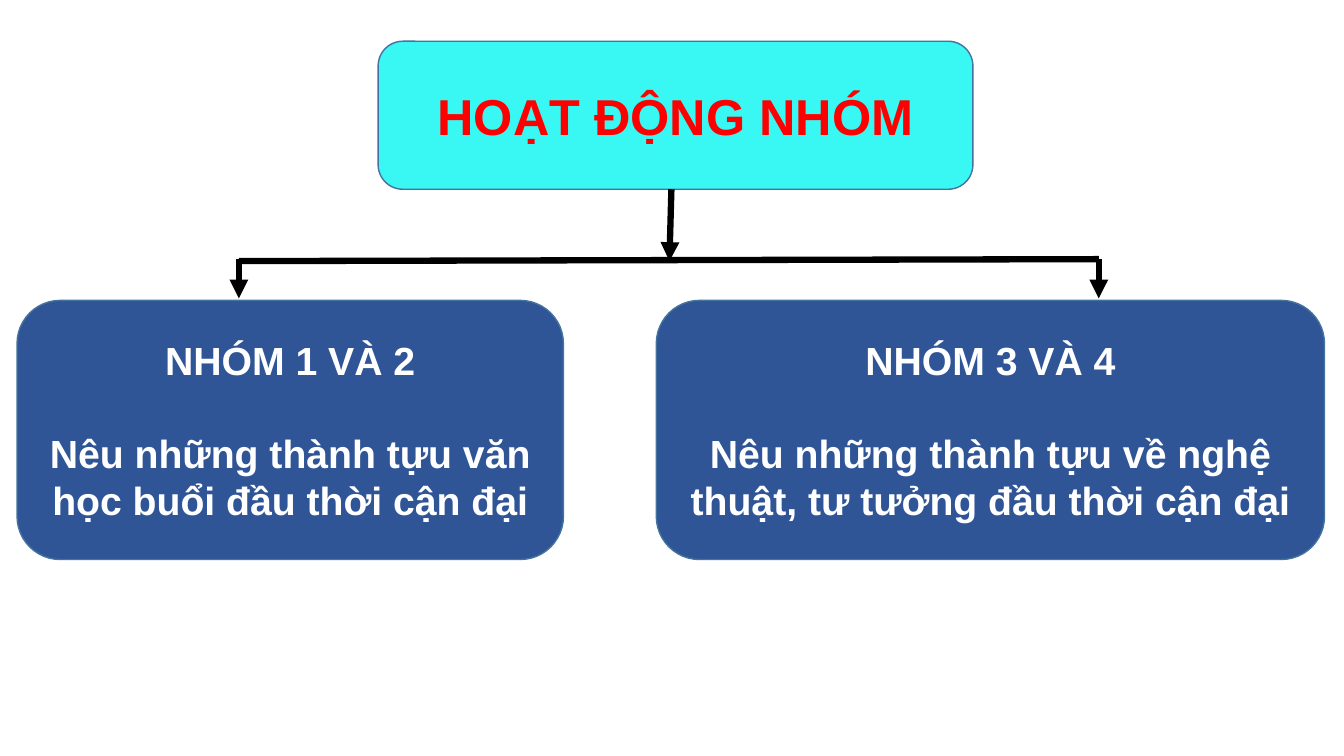
from lxml import etree
from pptx import Presentation
from pptx.dml.color import RGBColor
from pptx.enum.shapes import MSO_CONNECTOR, MSO_SHAPE
from pptx.enum.text import MSO_ANCHOR, PP_ALIGN
from pptx.oxml.ns import qn
from pptx.util import Cm, Pt

ROUNDED = MSO_SHAPE.ROUNDED_RECTANGLE
STRAIGHT = MSO_CONNECTOR.STRAIGHT
MIDDLE = MSO_ANCHOR.MIDDLE
CENTER = PP_ALIGN.CENTER

FONT = "Arial"
COLORS = {
    "title_fill": "39F7F2",
    "title_text": "FF0000",
    "group_fill": "2F5597",
    "group_text": "FFFFFF",
    "border": "43739E",
    "arrow": "000000",
}


def rgb(name):
    return RGBColor.from_string(COLORS[name])


def add_box(slide, box, fill, color, size, lines, gap=0):
    """Rounded box with centred bold paragraphs, gap points apart."""
    sp = slide.shapes.add_shape(ROUNDED, *(Cm(v) for v in box))
    sp.shadow.inherit = False
    sp.fill.solid()
    sp.fill.fore_color.rgb = rgb(fill)
    sp.line.color.rgb = rgb("border")
    sp.line.width = Pt(1)
    tf = sp.text_frame
    tf.word_wrap = True
    tf.vertical_anchor = MIDDLE
    for i, text in enumerate(lines):
        p = tf.paragraphs[0] if i == 0 else tf.add_paragraph()
        p.text = text
        p.alignment = CENTER
        p.space_before = Pt(gap if i else 0)
        p.font.name = FONT
        p.font.size = Pt(size)
        p.font.bold = True
        p.font.color.rgb = rgb(color)


def add_line(slide, start, end, arrow=True):
    cxn = slide.shapes.add_connector(STRAIGHT, *(Cm(v) for v in start + end))
    cxn.line.color.rgb = rgb("arrow")
    cxn.line.width = Pt(4.5)
    if arrow:
        etree.SubElement(cxn.line._get_or_add_ln(), qn("a:tailEnd"), type="triangle")
    etree.SubElement(cxn._element.spPr, qn("a:effectLst"))


def add_title(slide, box):
    add_box(slide, box, "title_fill", "title_text", 36, ["HOẠT ĐỘNG NHÓM"])


def add_branches(slide, box):
    """Stem from the top of the box, crossbar, and a drop at each end."""
    left, top, width, height = box
    right, bottom = left + width, top + height
    bar = top + 1.76
    stem = left + 10.9
    add_line(slide, (stem, top), (stem - 0.05, bar + 0.05))
    add_line(slide, (left, bar + 0.05), (right, bar), arrow=False)
    for x in (left, right):
        add_line(slide, (x, bar), (x, bottom))


def add_group(slide, box, name, task):
    add_box(slide, box, "group_fill", "group_text", 28, [name, task], gap=33)


def main():
    prs = Presentation()
    prs.slide_width, prs.slide_height = Cm(33.87), Cm(19.05)
    slide = prs.slides.add_slide(prs.slide_layouts[6])

    # Title and arrows
    add_title(slide, (9.53, 1.04, 14.99, 3.73))
    add_branches(slide, (6.02, 4.77, 21.67, 2.75))

    # Groups
    top, height = 7.57, 6.53
    add_group(slide, (0.43, top, 13.77, height), "NHÓM 1 VÀ 2",
              "Nêu những thành tựu văn học buổi đầu thời cận đại")
    add_group(slide, (16.54, top, 16.84, height), "NHÓM 3 VÀ 4",
              "Nêu những thành tựu về nghệ thuật, tư tưởng đầu thời cận đại")

    prs.save("out.pptx")


if __name__ == "__main__":
    main()
